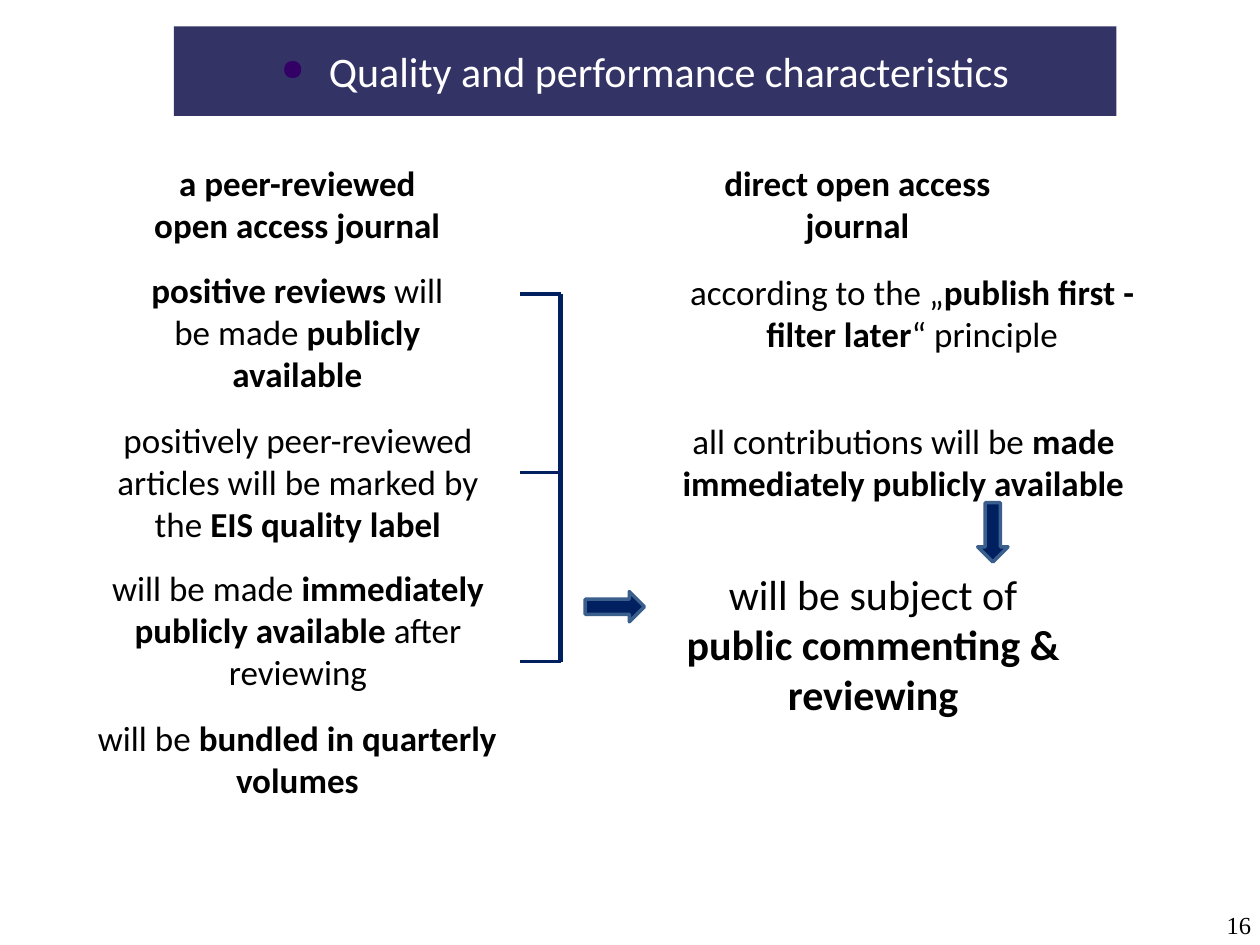
from lxml.etree import SubElement
from pptx import Presentation
from pptx.dml.color import RGBColor
from pptx.enum.shapes import MSO_CONNECTOR as Connector, MSO_SHAPE as Shape
from pptx.enum.text import MSO_ANCHOR as Anchor, MSO_AUTO_SIZE as AutoSize, PP_ALIGN as Align
from pptx.oxml.ns import qn
from pptx.util import Inches, Pt

BLACK = RGBColor(0x00, 0x00, 0x00)
WHITE = RGBColor(0xFF, 0xFF, 0xFF)
INDIGO = RGBColor(0x33, 0x33, 0x66)
PURPLE = RGBColor(0x33, 0x00, 0x66)
NAVY = RGBColor(0x00, 0x20, 0x60)
STEEL = RGBColor(0x3A, 0x5F, 0x8C)

# Left, top, width, height and text; asterisks enclose bold words
STATEMENTS = [
    (1.06, 1.23, 2.6, 0.77, "*a peer-reviewed open access journal*"),
    (1.06, 2.08, 2.6, 1.11, "*positive reviews *will be made *publicly available*"),
    (0.75, 3.27, 3.23, 1.11,
     "positively peer-reviewed articles will be marked by the *EIS quality label*"),
    (0.75, 4.45, 3.23, 1.11, "will be made *immediately publicly available* after reviewing"),
    (0.55, 5.64, 3.62, 0.77, "will be *bundled in quarterly volumes*"),
    (5.31, 1.23, 2.99, 0.77, "*direct open access journal*"),
    (5.31, 2.1, 3.86, 0.77, "according to the „*publish first - filter later*“ principle"),
    (5.24, 3.28, 3.86, 0.77, "all contributions will be *made immediately publicly available*"),
]
BRACKET_LEFT, BRACKET_RIGHT = 4.13, 4.45
BRACKET_ROWS = [2.33, 3.75, 5.25]


class SlideBuilder:
    def __init__(self, slide, font="Calibri"):
        self.slide = slide
        self.font = font

    def style(self, paragraph, size, color=BLACK, align=Align.CENTER, font=None):
        paragraph.alignment = align
        paragraph.font.name = font or self.font
        paragraph.font.size = Pt(size)
        paragraph.font.color.rgb = color

    def title(self, text, left, top, width, height):
        shape = self.slide.shapes.title
        shape.left, shape.top = Inches(left), Inches(top)
        shape.width, shape.height = Inches(width), Inches(height)
        shape.fill.solid()
        shape.fill.fore_color.rgb = INDIGO
        frame = shape.text_frame
        frame.text = text
        frame.auto_size = AutoSize.NONE
        frame.vertical_anchor = Anchor.MIDDLE
        paragraph = frame.paragraphs[0]
        paragraph.space_before = Pt(7)
        self.bullet(paragraph, "●", PURPLE, 70, 0.38)
        self.style(paragraph, 24, WHITE)

    def bullet(self, paragraph, character, color, percent, indent):
        properties = paragraph._p.get_or_add_pPr()
        properties.set("marL", str(Inches(indent)))
        properties.set("indent", str(-Inches(indent)))
        bullet_color = SubElement(properties, qn("a:buClr"))
        SubElement(bullet_color, qn("a:srgbClr"), val=str(color))
        SubElement(properties, qn("a:buSzPct"), val=str(percent * 1000))
        SubElement(properties, qn("a:buChar"), char=character)

    def text(self, left, top, width, height, *lines, size=20):
        """Add centred lines in which asterisks enclose bold words."""
        box = self.slide.shapes.add_textbox(
            Inches(left), Inches(top), Inches(width), Inches(height))
        frame = box.text_frame
        frame.word_wrap = True
        for index, line in enumerate(lines):
            paragraph = frame.add_paragraph() if index else frame.paragraphs[0]
            self.style(paragraph, size)
            for position, words in enumerate(line.split("*")):
                if words:
                    run = paragraph.add_run()
                    run.text = words
                    run.font.bold = position % 2 == 1
        return frame

    def page_number(self, number, left, top, width, height):
        frame = self.text(left, top, width, height, number)
        frame.margin_left = frame.margin_right = frame.margin_top = frame.margin_bottom = 0
        self.style(frame.paragraphs[0], 14, align=Align.RIGHT, font="Times New Roman")

    def line(self, x1, y1, x2, y2, width=2.25):
        connector = self.slide.shapes.add_connector(
            Connector.STRAIGHT, Inches(x1), Inches(y1), Inches(x2), Inches(y2))
        connector.line.color.rgb = NAVY
        connector.line.width = Pt(width)
        SubElement(connector._element.spPr, qn("a:effectLst"))

    def arrow(self, left, top, rotation=0):
        shape = self.slide.shapes.add_shape(
            Shape.DOWN_ARROW, Inches(left), Inches(top), Inches(0.24), Inches(0.47))
        shape.rotation = rotation
        shape.shadow.inherit = False
        shape.fill.solid()
        shape.fill.fore_color.rgb = NAVY
        shape.line.color.rgb = STEEL
        shape.line.width = Pt(2)


def main():
    presentation = Presentation()
    presentation.slide_width, presentation.slide_height = Inches(10), Inches(7.5)
    title_only = presentation.slide_layouts[5]
    builder = SlideBuilder(presentation.slides.add_slide(title_only))

    builder.title("Quality and performance characteristics", 1.38, 0.21, 7.48, 0.71)
    for left, top, width, height, statement in STATEMENTS:
        builder.text(left, top, width, height, statement)
    builder.text(5, 4.46, 3.86, 1.31, "will be subject of",
                 "*public commenting & reviewing*", size=24)
    builder.arrow(7.76, 3.99)

    builder.line(BRACKET_RIGHT, BRACKET_ROWS[0], BRACKET_RIGHT, BRACKET_ROWS[-1], width=3)
    for row in BRACKET_ROWS:
        builder.line(BRACKET_LEFT, row, BRACKET_RIGHT, row)
    builder.arrow(4.76, 4.58, rotation=270)

    builder.page_number("16", 9.25, 7.22, 0.68, 0.28)
    presentation.save("out.pptx")


if __name__ == "__main__":
    main()
